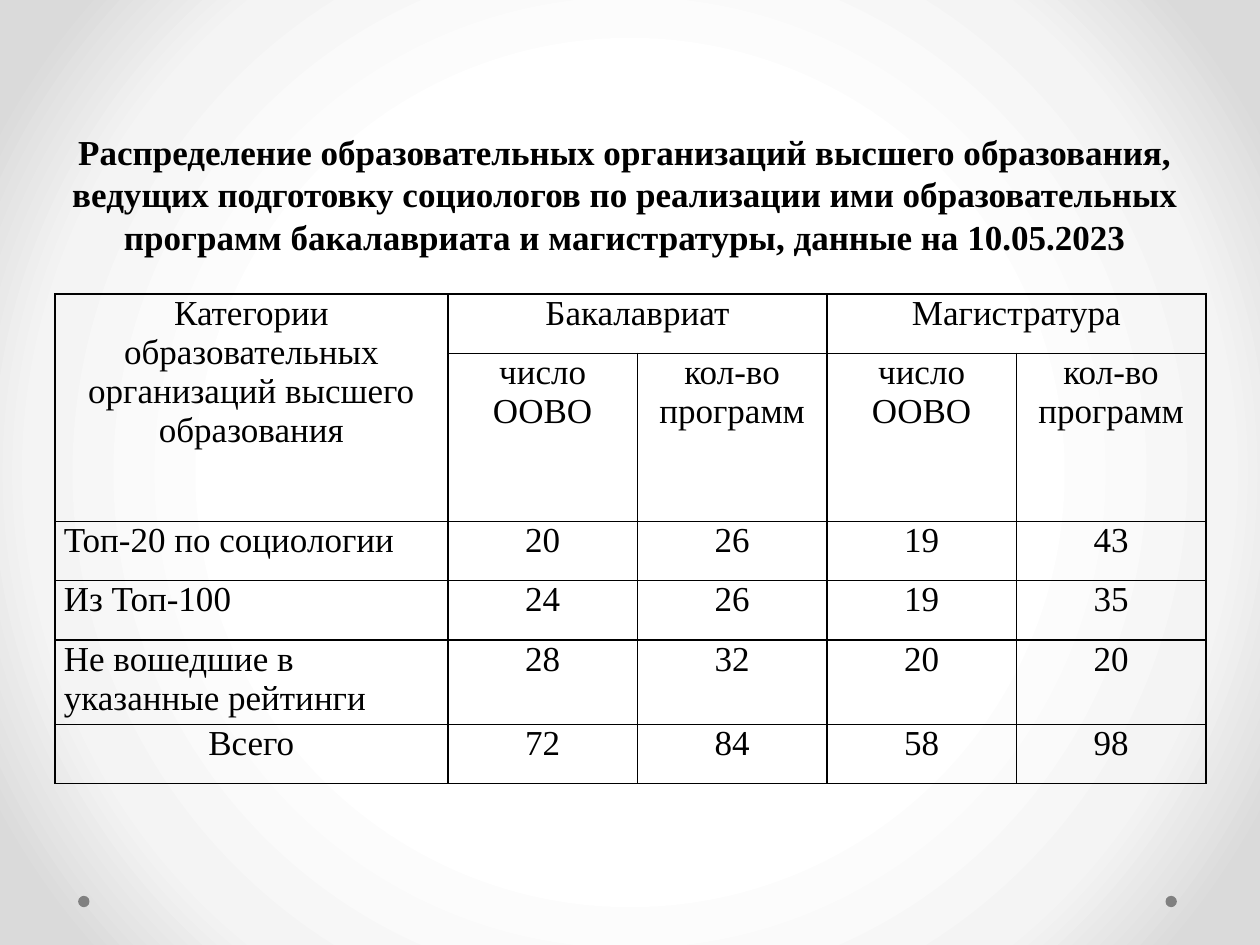
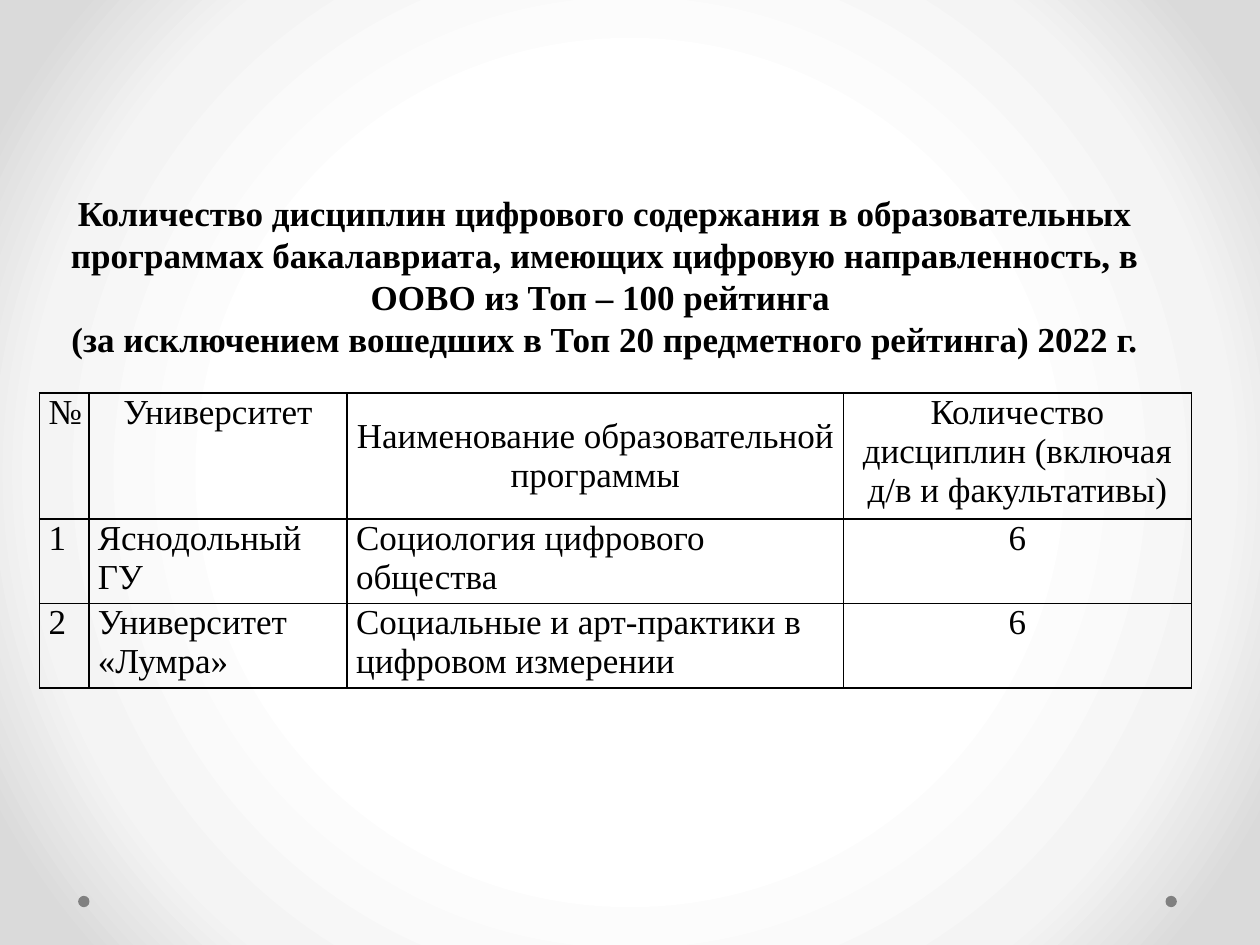
from lxml import etree
from pptx import Presentation
from pptx.dml.color import RGBColor
from pptx.enum.shapes import MSO_SHAPE
from pptx.enum.text import MSO_ANCHOR, PP_ALIGN
from pptx.oxml import parse_xml
from pptx.oxml.ns import nsdecls, qn
from pptx.util import Inches, Pt

BLACK = RGBColor(0x00, 0x00, 0x00)
DOT_GREY = RGBColor(0x80, 0x80, 0x80)
GLOW = [(50, RGBColor(0xFF, 0xFF, 0xFF)), (76, RGBColor(0xF4, 0xF4, 0xF4)), (92, RGBColor(0xDA, 0xDA, 0xDA))]
FONT = "Times New Roman"
SIZE = Pt(20)

deck = Presentation()
deck.slide_width, deck.slide_height = Inches(10), Inches(7.5)
COLUMN = deck.slide_width / 100
ROW = deck.slide_height / 75


def grid(left, top, width, height):
    return int(left * COLUMN), int(top * ROW), int(width * COLUMN), int(height * ROW)


def write(frame, text, align, bold=False):
    frame.text = text
    for paragraph in frame.paragraphs:
        paragraph.alignment = align
        paragraph.font.name = FONT
        paragraph.font.size = SIZE
        paragraph.font.bold = bold
        paragraph.font.color.rgb = BLACK


backdrop = deck.slide_master.background.fill
backdrop.solid()
stops = "".join(f'<a:gs pos="{place * 1000}"><a:srgbClr val="{color}"/></a:gs>' for place, color in GLOW)
glow = parse_xml(
    f'<a:gradFill {nsdecls("a")} rotWithShape="1"><a:gsLst>{stops}</a:gsLst><a:path path="circle">'
    '<a:fillToRect l="50000" t="50000" r="50000" b="50000"/></a:path></a:gradFill>')
backdrop_fill = deck.slide_master.element.find(".//" + qn("p:bgPr")).find(qn("a:solidFill"))
backdrop_fill.getparent().replace(backdrop_fill, glow)

pages = [
    {
        "title": "Распределение образовательных организаций высшего образования, ведущих подготовку "
                 "социологов по реализации ими образовательных программ бакалавриата и магистратуры, "
                 "данные на 10.05.2023",
        "title_area": (4.3, 9.9, 90.6, 11.1),
        "corner": (4.35, 23.35),
        "widths": [31.2] + [15.04] * 4,
        "heights": [4.7, 13.3, 4.7, 4.7, 6.7, 4.7],
        "merges": [(0, 0, 1, 0), (0, 1, 0, 2), (0, 3, 0, 4)],
        "left_aligned": [(2, 0), (3, 0), (4, 0)],
        "middle": [],
        "rows": [
            ["Категории образовательных организаций высшего образования", "Бакалавриат", "", "Магистратура", ""],
            [""] + ["число ООВО", "кол-во программ"] * 2,
            ["Топ-20 по социологии", "20", "26", "19", "43"],
            ["Из Топ-100", "24", "26", "19", "35"],
            ["Не вошедшие в указанные рейтинги", "28", "32", "20", "20"],
            ["Всего", "72", "84", "58", "98"],
        ],
    },
    {
        "title": "Количество дисциплин цифрового содержания в образовательных программах бакалавриата, "
                 "имеющих цифровую направленность, в ООВО из Топ – 100 рейтинга \n"
                 "(за исключением вошедших в Топ 20 предметного рейтинга) 2022 г.",
        "title_area": (4.3, 14.7, 87.4, 14.5),
        "corner": (3.15, 31.2),
        "widths": [3.9, 20.5, 39.4, 27.6],
        "heights": [10, 6.7, 6.7],
        "merges": [],
        "left_aligned": [(row, column) for row in (1, 2) for column in range(3)],
        "middle": [(0, 2)],
        "rows": [
            ["№", "Университет", "Наименование образовательной программы",
             "Количество дисциплин (включая д/в и факультативы)"],
            ["1", "Яснодольный ГУ", "Социология цифрового общества", "6"],
            ["2", "Университет «Лумра»", "Социальные и арт-практики в цифровом измерении", "6"],
        ],
    },
]

for page in pages:
    slide = deck.slides.add_slide(deck.slide_layouts[6])
    for dot_left in (92.5, 6.2):
        dot = slide.shapes.add_shape(MSO_SHAPE.OVAL, *grid(dot_left, 71.1, 0.9, 0.9))
        dot.shadow.inherit = False
        dot.fill.solid()
        dot.fill.fore_color.rgb = DOT_GREY
        dot.line.fill.background()

    title = slide.shapes.add_textbox(*grid(*page["title_area"])).text_frame
    title.word_wrap = True
    write(title, page["title"], PP_ALIGN.CENTER, bold=True)

    rows, widths, heights = page["rows"], page["widths"], page["heights"]
    area = grid(*page["corner"], sum(widths), sum(heights))
    table = slide.shapes.add_table(len(rows), len(widths), *area).table
    table.first_row = table.horz_banding = False
    for column, width in zip(table.columns, widths):
        column.width = int(width * COLUMN)
    for row, height in zip(table.rows, heights):
        row.height = int(height * ROW)

    for r, texts in enumerate(rows):
        for c, text in enumerate(texts):
            cell = table.cell(r, c)
            write(cell.text_frame, text, PP_ALIGN.LEFT if (r, c) in page["left_aligned"] else PP_ALIGN.CENTER)
            cell.vertical_anchor = MSO_ANCHOR.MIDDLE if (r, c) in page["middle"] else MSO_ANCHOR.TOP
            cell.margin_left = cell.margin_right = int(0.72 * COLUMN)
            cell.margin_top = cell.margin_bottom = 0
            properties = cell._tc.get_or_add_tcPr()
            for side in ("a:lnL", "a:lnR", "a:lnT", "a:lnB"):
                border = etree.SubElement(properties, qn(side), w=str(Pt(1)))
                ink = etree.SubElement(border, qn("a:solidFill"))
                etree.SubElement(ink, qn("a:srgbClr"), val=str(BLACK))
            cell.fill.background()

    for top, left, bottom, right in page["merges"]:
        table.cell(top, left).merge(table.cell(bottom, right))

deck.save("out.pptx")
